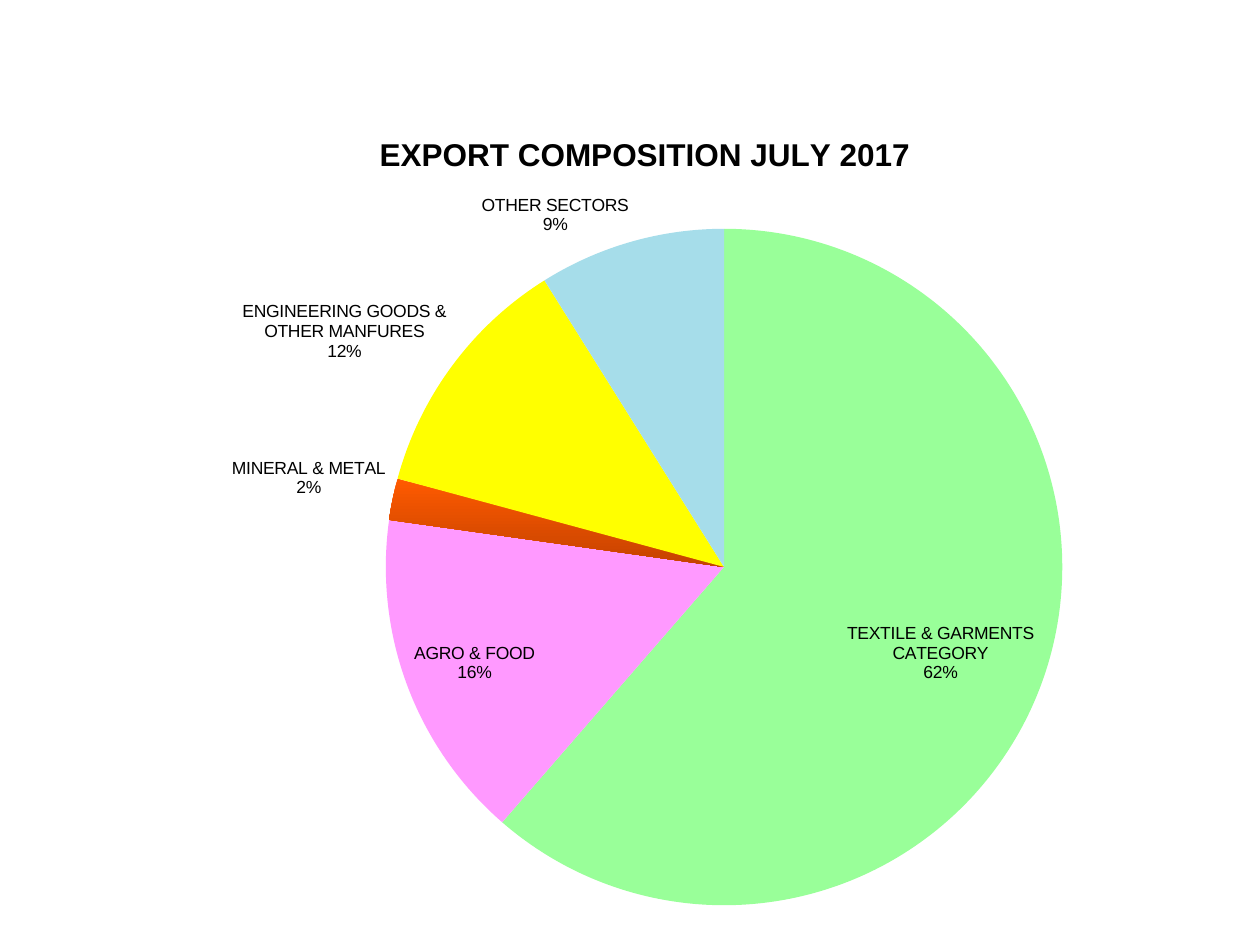
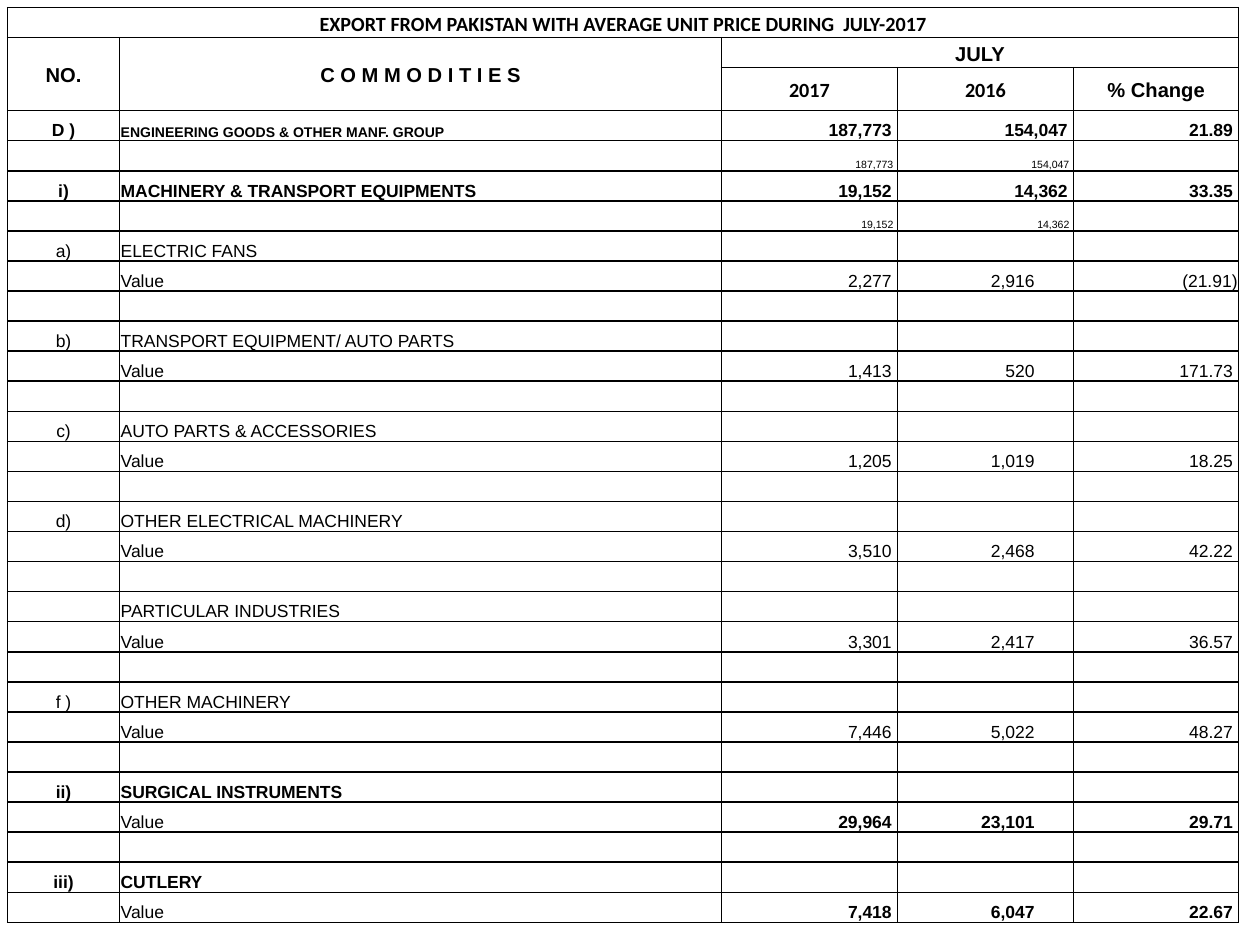
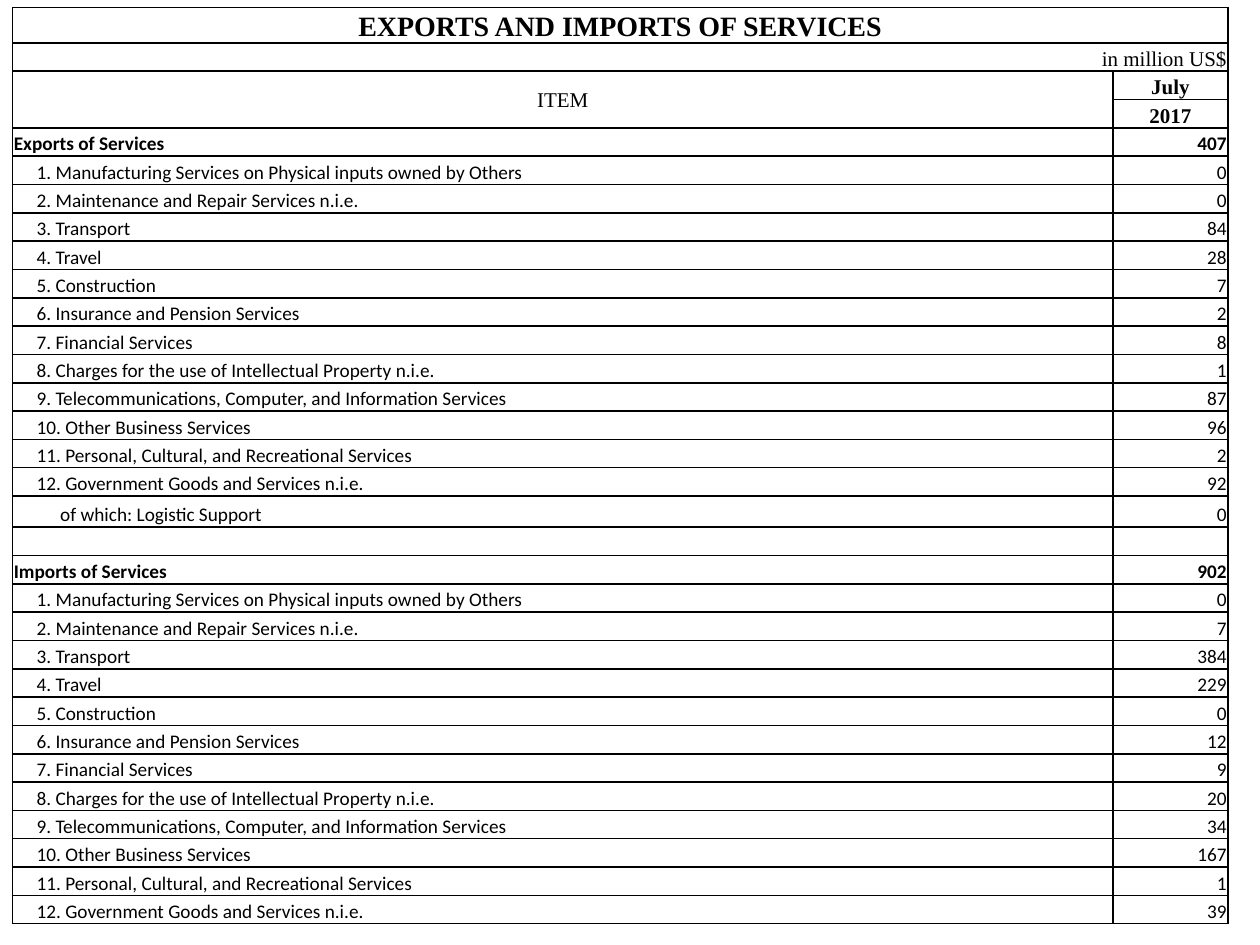
"""Builds three slides on July 2017 exports: a pie chart and two tables."""
import pptx
import pptx.chart.data
import pptx.dml.color
import pptx.enum.chart
import pptx.enum.text
import pptx.oxml
import pptx.oxml.ns
import pptx.util

Pt = pptx.util.Pt
RGBColor = pptx.dml.color.RGBColor
ALIGN = pptx.enum.text.PP_ALIGN
ANCHOR = pptx.enum.text.MSO_ANCHOR
LABEL = pptx.enum.chart.XL_LABEL_POSITION

BLACK = RGBColor(0x00, 0x00, 0x00)
GREEN = RGBColor(0x99, 0xFF, 0x99)
PINK = RGBColor(0xFF, 0x99, 0xFF)
ORANGE = RGBColor(0xFF, 0x5A, 0x00)
RUST = RGBColor(0xC4, 0x42, 0x00)
YELLOW = RGBColor(0xFF, 0xFF, 0x00)
BLUE = RGBColor(0xA6, 0xDD, 0xEA)
NS = pptx.oxml.ns.nsdecls("a")
CHART_NS = pptx.oxml.ns.nsdecls("c")


def add_grid(s, left, top, widths, heights):
    """Add a table with black borders, no fills and small empty cells."""
    frame = s.shapes.add_table(len(heights), len(widths), Pt(left), Pt(top),
                               Pt(sum(widths)), Pt(sum(heights)))
    table = frame.table
    table.first_row = table.horz_banding = False
    for column, width in zip(table.columns, widths):
        column.width = Pt(width)
    for row, height in zip(table.rows, heights):
        row.height = Pt(height)
    for cell in table.iter_cells():
        cell.margin_left = cell.margin_right = cell.margin_top = Pt(0.7)
        cell.margin_bottom = 0
        cell.text_frame.paragraphs[0]._p.get_or_add_endParaRPr().set("sz", "1000")
        tc_pr = cell._tc.get_or_add_tcPr()
        for side in ("lnL", "lnR", "lnT", "lnB"):
            tc_pr.append(pptx.oxml.parse_xml(
                f'<a:{side} {NS} w="12700"><a:solidFill><a:srgbClr val="{BLACK}"/>'
                f'</a:solidFill></a:{side}>'))
        cell.fill.background()
    return table


def put(cell, text, size, bold=False, font="Arial", align=ALIGN.LEFT,
        anchor=ANCHOR.BOTTOM, left=0.7, right=0.7):
    """Write one run into a table cell."""
    cell.vertical_anchor = anchor
    cell.margin_left, cell.margin_right = Pt(left), Pt(right)
    p = cell.text_frame.paragraphs[0]
    p.alignment = align
    r = p.add_run()
    r.text = text
    r.font.size, r.font.bold, r.font.name = Pt(size), bold, font
    r.font.color.rgb = BLACK


prs = pptx.Presentation()
prs.slide_width, prs.slide_height = Pt(720), Pt(540)
blank = prs.slide_layouts[6]

s = prs.slides.add_slide(blank)
sectors = [
    ("TEXTILE & GARMENTS CATEGORY", 62, GREEN, LABEL.INSIDE_END),
    ("AGRO & FOOD", 16, PINK, LABEL.INSIDE_END),
    ("MINERAL & METAL", 2, ORANGE, LABEL.OUTSIDE_END),
    ("ENGINEERING GOODS & OTHER MANFURES", 12, YELLOW, LABEL.OUTSIDE_END),
    ("OTHER SECTORS", 9, BLUE, LABEL.OUTSIDE_END),
]
data = pptx.chart.data.CategoryChartData()
data.categories = [sector[0] for sector in sectors]
data.add_series("Series 1", [sector[1] for sector in sectors])
chart = s.shapes.add_chart(pptx.enum.chart.XL_CHART_TYPE.PIE, Pt(23.8), Pt(54),
                           Pt(678.2), Pt(473.8), data).chart
chart.has_legend = False
chart.font.name, chart.font.size = "Arial", Pt(10)
chart.font.color.rgb = BLACK
chart.has_title = True
r = chart.chart_title.text_frame.paragraphs[0].add_run()
r.text = "EXPORT COMPOSITION JULY 2017"
r.font.size, r.font.bold, r.font.name = Pt(18), True, "Arial"
r.font.color.rgb = BLACK

plot = chart.plots[0]
plot.vary_by_categories = True
series = plot.series[0]
for i, (name, share, color, position) in enumerate(sectors):
    fill = series.points[i].format.fill
    if color == ORANGE:
        fill.gradient()
        fill.gradient_angle = 270
        for stop, shade in zip(fill.gradient_stops, (ORANGE, RUST)):
            stop.color.rgb = shade
    else:
        fill.solid()
        fill.fore_color.rgb = color
    series.points[i].data_label.position = position
labels = series.data_labels
labels.show_category_name = labels.show_value = True
labels.show_percentage = False
labels.number_format, labels.number_format_is_linked = '0"%"', False
labels.font.bold, labels.font.size, labels.font.name = True, Pt(10), "Arial"
labels.font.color.rgb = BLACK
for flags in series._element.xpath("c:dLbls//c:showBubbleSize"):
    flags.addnext(pptx.oxml.parse_xml(f"<c:separator {CHART_NS}>\n</c:separator>"))
for label in series._element.xpath("c:dLbls/c:dLbl"):
    label.xpath("c:showVal")[0].set("val", "1")
    label.xpath("c:showCatName")[0].set("val", "1")
    label.xpath("c:showPercent")[0].set("val", "0")

plot_area = chart._chartSpace.chart.plotArea
for old in plot_area.xpath("c:layout"):
    plot_area.remove(old)
plot_area.insert(0, pptx.oxml.parse_xml(
    f'<c:layout {CHART_NS}><c:manualLayout><c:layoutTarget val="inner"/>'
    '<c:xMode val="edge"/><c:yMode val="edge"/><c:x val="0.29"/><c:y val="0.16"/>'
    '<c:w val="0.57"/><c:h val="0.82"/></c:manualLayout></c:layout>'))
title = chart.chart_title._element
for old in title.xpath("c:layout"):
    title.remove(old)
title.xpath("c:tx")[0].addnext(pptx.oxml.parse_xml(
    f'<c:layout {CHART_NS}><c:manualLayout><c:xMode val="edge"/><c:yMode val="edge"/>'
    '<c:x val="0.28"/><c:y val="0.04"/></c:manualLayout></c:layout>'))

s = prs.slides.add_slide(blank)
table = add_grid(s, 4.3, 4.3, [64, 344, 100.6, 100.6, 94.4],
                 [17.2] * 2 + [24.6] + [17.2] * 27)
for first, last in (((0, 0), (0, 4)), ((1, 0), (2, 0)), ((1, 1), (2, 1)), ((1, 2), (1, 4))):
    table.cell(*first).merge(table.cell(*last))
headings = [
    (0, 0, "EXPORT FROM PAKISTAN WITH AVERAGE UNIT PRICE DURING  JULY-2017", "Calibri"),
    (1, 0, "NO.", "Arial"),
    (1, 1, "C O M M O D I T I E S", "Arial"),
    (1, 2, "JULY", "Arial"),
    (2, 2, "2017", "Calibri"),
    (2, 3, "2016", "Calibri"),
    (2, 4, "% Change", "Arial"),
]
for row, col, text, font in headings:
    cell = table.cell(row, col)
    put(cell, text, 11.5, True, font, ALIGN.CENTER, ANCHOR.MIDDLE, 3.6, 3.6)
    cell.margin_top = 0
    cell.text_frame.paragraphs[0].line_spacing = 1.15

groups = [
    ("D )", "ENGINEERING GOODS & OTHER MANF. GROUP", 8, "187,773", "154,047", "21.89"),
    ("i)", "MACHINERY & TRANSPORT EQUIPMENTS", 10, "19,152", "14,362", "33.35"),
]
for i, (number, name, size, *values) in enumerate(groups):
    row = 3 + 2 * i
    put(table.cell(row, 0), number, 10, True, align=ALIGN.CENTER)
    put(table.cell(row, 1), name, size, True)
    for col, value in enumerate(values, 2):
        put(table.cell(row, col), value, 10, True, align=ALIGN.RIGHT, right=3.4)
    for col, value in enumerate(values[:2], 2):
        put(table.cell(row + 1, col), value, 6, align=ALIGN.RIGHT, right=2.4)

goods = [
    ("a)", "ELECTRIC FANS", False, "2,277", "2,916", "(21.91)"),
    ("b)", "TRANSPORT EQUIPMENT/ AUTO PARTS", False, "1,413", "520", "171.73"),
    ("c)", "AUTO PARTS & ACCESSORIES", False, "1,205", "1,019", "18.25"),
    ("d)", "OTHER ELECTRICAL MACHINERY", False, "3,510", "2,468", "42.22"),
    ("", "PARTICULAR INDUSTRIES", False, "3,301", "2,417", "36.57"),
    ("f )", "OTHER MACHINERY", False, "7,446", "5,022", "48.27"),
    ("ii)", "SURGICAL INSTRUMENTS", True, "29,964", "23,101", "29.71"),
    ("iii)", "CUTLERY", True, "7,418", "6,047", "22.67"),
]
for i, (number, name, bold, *values) in enumerate(goods):
    row = 7 + 3 * i
    if number:
        put(table.cell(row, 0), number, 10, bold, align=ALIGN.CENTER)
    put(table.cell(row, 1), name, 10, bold)
    put(table.cell(row + 1, 1), "Value", 10)
    for col, value, right in zip((2, 3, 4), values, (3.4, 22.3, 3.4)):
        put(table.cell(row + 1, col), value, 10, bold, align=ALIGN.RIGHT,
            right=0.7 if value.startswith("(") else right)

s = prs.slides.add_slide(blank)
table = add_grid(s, 7.2, 4.3, [628.8, 65.7], [20.2] + [16.2] * 16 + [17.8] + [16.2] * 14)
for first, last in (((0, 0), (0, 1)), ((1, 0), (1, 1)), ((2, 0), (3, 0))):
    table.cell(*first).merge(table.cell(*last))
headings = [
    (0, 0, "EXPORTS AND IMPORTS OF SERVICES", 16, True, ALIGN.CENTER, ANCHOR.BOTTOM),
    (1, 0, "in million US$", 12, False, ALIGN.RIGHT, ANCHOR.BOTTOM),
    (2, 0, "ITEM", 12, False, ALIGN.CENTER, ANCHOR.MIDDLE),
    (2, 1, "July", 12, True, ALIGN.CENTER, ANCHOR.BOTTOM),
    (3, 1, "2017", 12, True, ALIGN.CENTER, ANCHOR.BOTTOM),
]
for row, col, text, size, bold, align, anchor in headings:
    put(table.cell(row, col), text, size, bold, "Times New Roman", align, anchor)

services = [
    "1. Manufacturing Services on Physical inputs owned by Others",
    "2. Maintenance and Repair Services n.i.e.",
    "3. Transport",
    "4. Travel",
    "5. Construction",
    "6. Insurance and Pension Services",
    "7. Financial Services",
    "8. Charges for the use of Intellectual Property n.i.e.",
    "9. Telecommunications, Computer, and Information Services",
    "10. Other Business Services",
    "11. Personal, Cultural, and Recreational Services",
    "12. Government Goods and Services n.i.e.",
    "of which: Logistic Support",
]
flows = [
    (4, "Exports of Services", [407, 0, 0, 84, 28, 7, 2, 8, 1, 87, 96, 2, 92, 0]),
    (19, "Imports of Services", [902, 0, 7, 384, 229, 0, 12, 9, 20, 34, 167, 1, 39]),
]
for top, flow, amounts in flows:
    for i, (name, amount) in enumerate(zip([flow] + services, amounts)):
        indent = 0.7 if i == 0 else 27.2 if i == 13 else 13.7
        put(table.cell(top + i, 0), name, 11, i == 0, "Calibri", left=indent)
        put(table.cell(top + i, 1), str(amount), 11, i == 0, "Calibri", ALIGN.RIGHT)

prs.save("out.pptx")
